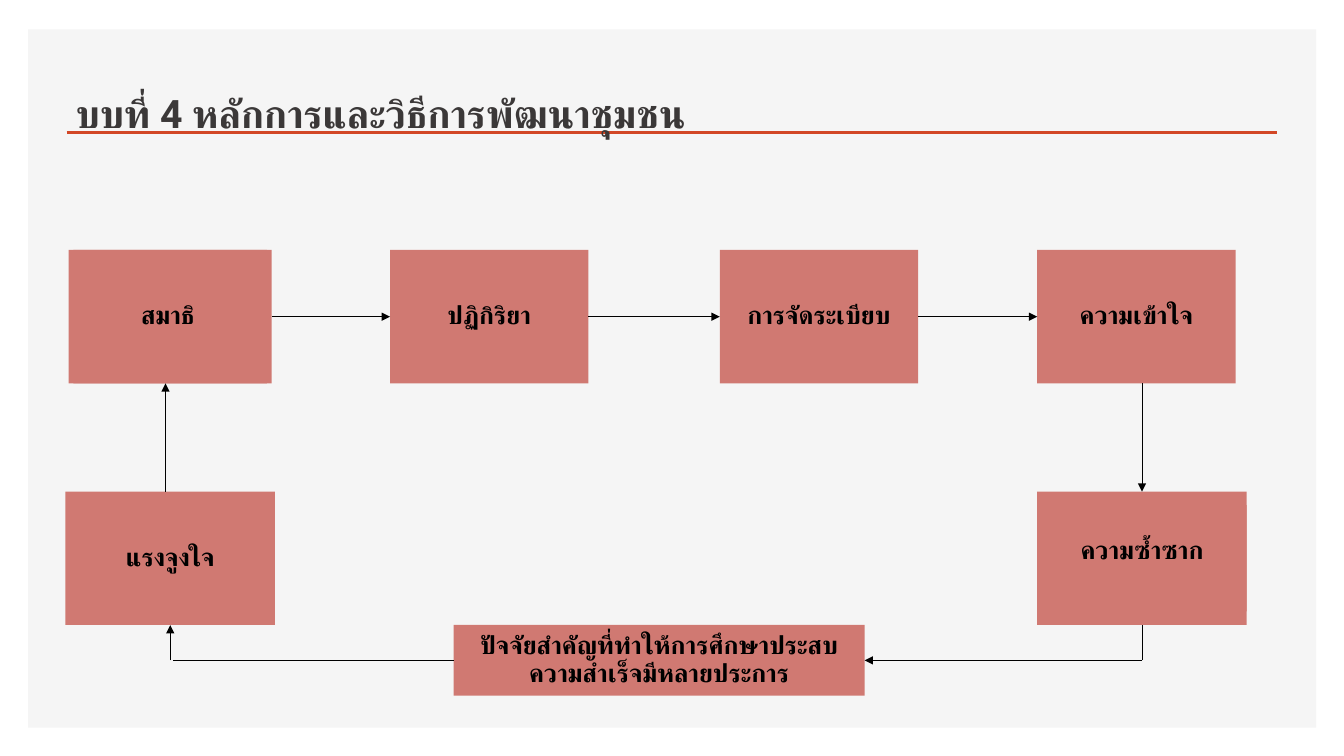
from lxml import etree
from pptx import Presentation
from pptx.dml.color import RGBColor
from pptx.enum.shapes import MSO_CONNECTOR as Link, MSO_SHAPE as Preset
from pptx.enum.text import MSO_ANCHOR as Anchor, MSO_AUTO_SIZE as Fit, PP_ALIGN as Align
from pptx.oxml.ns import qn
from pptx.util import Cm, Pt

COLORS = {"panel": "F5F5F5", "accent": "D24726", "title": "3B3838",
          "box": "D07972", "ink": "000000"}
TOP, LEFT, BOTTOM, RIGHT = range(4)


class CycleSlide:
    """Holds the style and the current slide."""

    def __init__(self, deck):
        self.slide = deck.slides.add_slide(deck.slide_layouts[5])
        self.shapes = self.slide.shapes

    def color(self, name):
        return RGBColor.from_string(COLORS[name])

    def add_text(self, paragraph, text, size, font, color):
        run = paragraph.add_run()
        run.text = text
        run.font.size, run.font.bold, run.font.name = Pt(size), True, font
        run.font.color.rgb = self.color(color)
        # Thai letters take the complex-script font
        etree.SubElement(run.font._element, qn("a:cs"), typeface=font)

    def title(self, text, x, y, width, height):
        heading = self.shapes.title
        heading.left, heading.top, heading.width, heading.height = map(Cm, (x, y, width, height))
        frame = heading.text_frame
        frame.auto_size, frame.word_wrap = Fit.NONE, True
        frame.vertical_anchor = Anchor.BOTTOM
        frame.paragraphs[0].alignment = Align.LEFT
        self.add_text(frame.paragraphs[0], text, 28, "Roboto", "title")
        # Bring the title in front of the panel
        self.shapes._spTree.append(heading._element)

    def block(self, x, y, width, height, fill="box"):
        block = self.shapes.add_shape(Preset.RECTANGLE, *map(Cm, (x, y, width, height)))
        block.shadow.inherit = False
        block.fill.solid()
        block.fill.fore_color.rgb = self.color(fill)
        block.line.fill.background()
        return block

    def step(self, text, x, y, width, height):
        step = self.block(x, y, width, height)
        frame = step.text_frame
        frame.word_wrap, frame.vertical_anchor = True, Anchor.MIDDLE
        frame.margin_left = frame.margin_right = Cm(0.03)
        frame.margin_top = frame.margin_bottom = Cm(0.03)
        paragraph = frame.paragraphs[0]
        paragraph.alignment, paragraph.line_spacing = Align.CENTER, 0.9
        self.add_text(paragraph, text, 18, "Arial", "ink")
        return step

    def line(self, start, end, begin=None, finish=None, arrow=True, color="ink", weight=0.5):
        """begin and finish are (shape, side) pairs to join."""
        line = self.shapes.add_connector(Link.STRAIGHT, *map(Cm, (*start, *end)))
        line.line.color.rgb, line.line.width = self.color(color), Pt(weight)
        if arrow:
            etree.SubElement(line.line._get_or_add_ln(), qn("a:tailEnd"), type="triangle")
        etree.SubElement(line._element.spPr, qn("a:effectLst"))
        if begin:
            line.begin_connect(*begin)
        if finish:
            line.end_connect(*finish)


def main():
    deck = Presentation()
    deck.slide_width, deck.slide_height = Cm(33.87), Cm(19.05)
    page = CycleSlide(deck)

    # Background panel, rule and title
    page.block(0.71, 0.74, 32.46, 17.6, "panel")
    page.line((1.68, 3.33), (32.18, 3.33), arrow=False, color="accent", weight=2)
    page.title("บบที่ 4 หลักการและวิธีการพัฒนาชุมชน", 1.65, 1.78, 19.1, 1.78)

    # Steps of the cycle
    upper, lower, tall, narrow, wide = 6.3, 12.39, 3.36, 5, 5.28
    factors = page.step("ปัจจัยสำคัญที่ทำให้การศึกษาประสบความสำเร็จมีหลายประการ",
                        11.43, 15.75, 10.36, 1.78)
    repetition_base = page.block(26.14, 12.73, wide, 3.02)
    repetition = page.step("ความซ้ำซาก", 26.14, lower, wide, 3.02)
    motivation = page.step("แรงจูงใจ", 1.65, lower, wide, tall)
    focus_base = page.block(1.85, upper, narrow, tall)
    page.step("สมาธิ", 1.73, upper, narrow, tall)
    reaction, ordering, insight = [
        page.step(text, x, upper, narrow, tall)
        for text, x in (("ปฏิกิริยา", 9.83), ("การจัดระเบียบ", 18.14), ("ความเข้าใจ", 26.14))]

    # Arrows along the upper row
    row = [focus_base, reaction, ordering, insight]
    for source, target in zip(row, row[1:]):
        page.line((0, 0), (0, 0), (source, RIGHT), (target, LEFT))

    # Down the right side and into the factors
    right_x, turn_y, base_y = 28.78, 16.64, 15.75
    page.line((right_x, upper + tall), (right_x, lower), finish=(repetition, TOP))
    page.line((right_x, base_y), (right_x, turn_y), begin=(repetition_base, BOTTOM), arrow=False)
    page.line((right_x, turn_y), (21.79, turn_y), finish=(factors, RIGHT))

    # Out to the left and back up
    page.line((11.43, turn_y), (4.37, turn_y), begin=(factors, LEFT), arrow=False)
    page.line((4.29, turn_y), (4.29, base_y), finish=(motivation, BOTTOM))
    page.line((4.17, lower), (4.17, upper + tall))

    deck.save("out.pptx")


if __name__ == "__main__":
    main()
